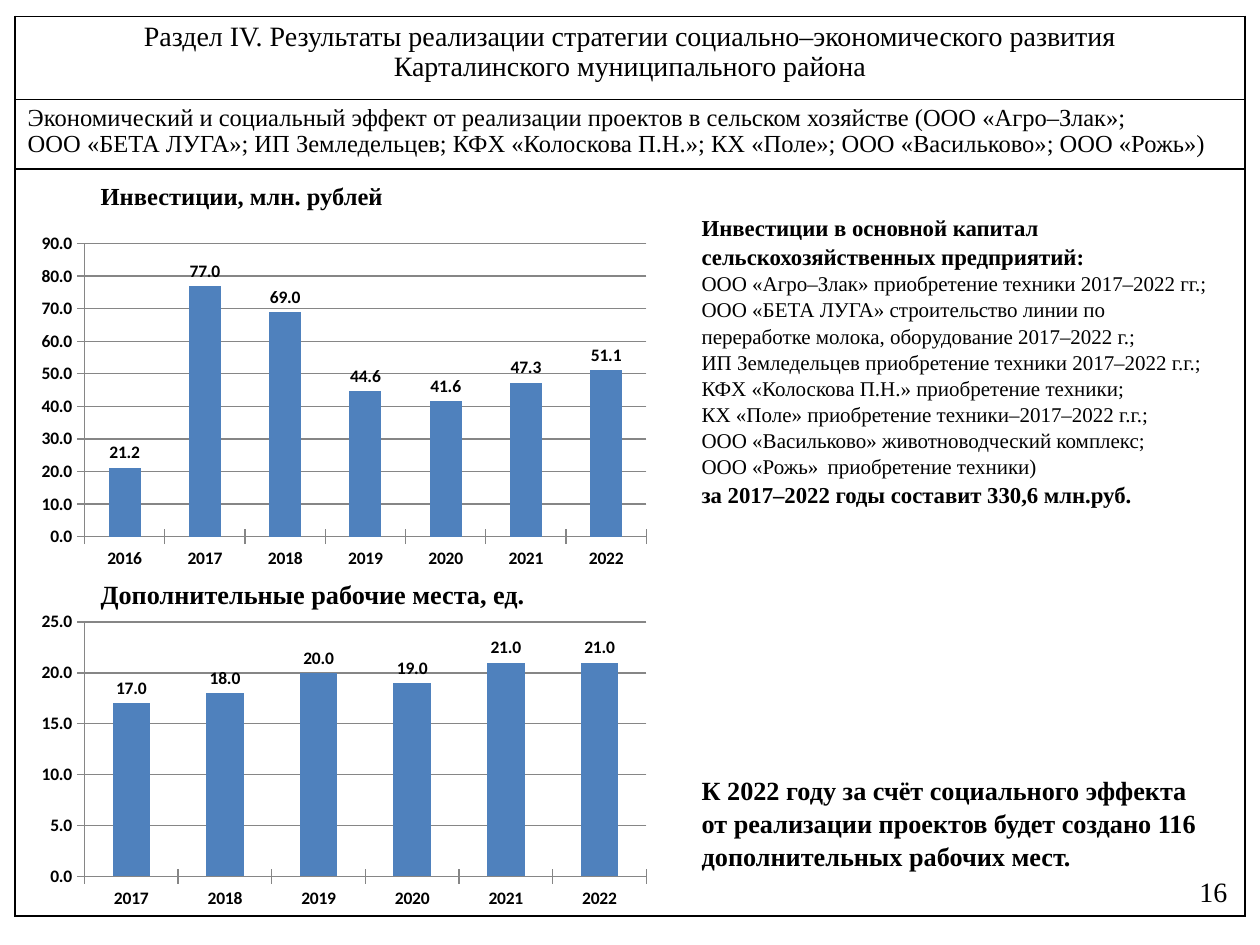
from lxml import etree
from pptx import Presentation
from pptx.chart.data import CategoryChartData
from pptx.dml.color import RGBColor
from pptx.enum.chart import XL_CHART_TYPE, XL_LABEL_POSITION, XL_TICK_MARK
from pptx.enum.text import MSO_ANCHOR, PP_ALIGN
from pptx.oxml.ns import qn
from pptx.util import Inches, Pt

BLACK = RGBColor(0x00, 0x00, 0x00)
BLUE = RGBColor(0x4F, 0x81, 0xBD)
GRAY = RGBColor(0x86, 0x86, 0x86)
COLUMNS = XL_CHART_TYPE.COLUMN_CLUSTERED
OUTSIDE_END = XL_LABEL_POSITION.OUTSIDE_END
CROSS = XL_TICK_MARK.CROSS
LEFT, RIGHT, CENTER, JUSTIFY = PP_ALIGN.LEFT, PP_ALIGN.RIGHT, PP_ALIGN.CENTER, PP_ALIGN.JUSTIFY
TOP, MIDDLE = MSO_ANCHOR.TOP, MSO_ANCHOR.MIDDLE

CHART_LEFT, CHART_WIDTH = 0.23, 5
HEADING_LEFT, NOTE_LEFT, TEXT_WIDTH = 0.7, 5.47, 4.25

TITLE = [
    "Раздел IV. Результаты реализации стратегии социально–экономического развития",
    "Карталинского муниципального района",
]
SUBTITLE = [
    "Экономический и социальный эффект от реализации проектов в сельском хозяйстве (ООО «Агро–Злак»;",
    "ООО «БЕТА ЛУГА»; ИП Земледельцев; КФХ «Колоскова П.Н.»; КХ «Поле»; ООО «Васильково»; ООО «Рожь»)",
]
PROJECTS = [
    "ООО «Агро–Злак» приобретение техники 2017–2022 гг.;",
    "ООО «БЕТА ЛУГА» строительство линии по переработке молока, оборудование 2017–2022 г.;",
    "ИП Земледельцев приобретение техники 2017–2022 г.г.;",
    "КФХ «Колоскова П.Н.» приобретение техники;",
    "КХ «Поле» приобретение техники–2017–2022 г.г.;",
    "ООО «Васильково» животноводческий комплекс;",
    "ООО «Рожь»\tприобретение техники)",
]
INVESTMENTS = {"2016": 21.2, "2017": 77, "2018": 69, "2019": 44.6,
               "2020": 41.6, "2021": 47.3, "2022": 51.1}
JOBS = {"2017": 17, "2018": 18, "2019": 20, "2020": 19, "2021": 21, "2022": 21}


def set_all(target, formats):
    for name, value in formats.items():
        setattr(target, name, value)


class SlideBuilder:
    text_font = "Times New Roman"
    chart_font = "Calibri"

    def __init__(self, slide):
        self.slide = slide

    def fill_text(self, frame, lines, align=LEFT, spacing=1.04):
        """Fill a text frame with (text, size, bold) lines, one paragraph each."""
        for index, (text, size, bold) in enumerate(lines):
            paragraph = frame.add_paragraph() if index else frame.paragraphs[0]
            set_all(paragraph, {"alignment": align, "line_spacing": spacing})
            run = paragraph.add_run()
            run.text = text
            set_all(run.font, {"name": self.text_font, "size": Pt(size), "bold": bold})
            run.font.color.rgb = BLACK

    def text(self, left, top, width, height, lines, align=LEFT, anchor=TOP):
        box = self.slide.shapes.add_textbox(
            Inches(left), Inches(top), Inches(width), Inches(height))
        set_all(box.text_frame, {"word_wrap": True, "vertical_anchor": anchor})
        self.fill_text(box.text_frame, lines, align)

    def border(self, cell):
        properties = cell._tc.get_or_add_tcPr()
        for position, side in enumerate(("a:lnL", "a:lnR", "a:lnT", "a:lnB")):
            line = etree.Element(qn(side), w=str(Pt(1)))
            fill = etree.SubElement(line, qn("a:solidFill"))
            etree.SubElement(fill, qn("a:srgbClr"), val=str(BLACK))
            properties.insert(position, line)

    def frame_table(self, left, top, width, rows):
        """Draw a one-column table from (height, lines, alignment) rows."""
        total = sum(height for height, _, _ in rows)
        table = self.slide.shapes.add_table(
            len(rows), 1, Inches(left), Inches(top), Inches(width), Inches(total)).table
        set_all(table, {"first_row": False, "horz_banding": False})
        for index, (height, lines, align) in enumerate(rows):
            table.rows[index].height = Inches(height)
            cell = table.cell(index, 0)
            cell.fill.background()
            self.border(cell)
            self.fill_text(cell.text_frame, lines, align, 0.96)

    def column_chart(self, top, height, values, maximum, step):
        data = CategoryChartData(number_format="0.0")
        data.categories = list(values)
        data.add_series("Series 1", list(values.values()))
        chart = self.slide.shapes.add_chart(
            COLUMNS, Inches(CHART_LEFT), Inches(top),
            Inches(CHART_WIDTH), Inches(height), data).chart
        set_all(chart, {"has_legend": False, "has_title": False})
        set_all(chart.font, {"name": self.chart_font, "size": Pt(10), "bold": True})
        chart.font.color.rgb = BLACK

        for axis in (chart.category_axis, chart.value_axis):
            axis.major_tick_mark = CROSS
            axis.tick_labels.font.bold = True
            axis.format.line.color.rgb = GRAY
        set_all(chart.value_axis, {"minimum_scale": 0, "maximum_scale": maximum,
                                   "major_unit": step, "has_major_gridlines": True})
        chart.value_axis.major_gridlines.format.line.color.rgb = GRAY
        set_all(chart.value_axis.tick_labels,
                {"number_format": "0.0", "number_format_is_linked": False})

        plot = chart.plots[0]
        set_all(plot, {"gap_width": 150, "vary_by_categories": False,
                       "has_data_labels": True})
        set_all(plot.data_labels, {"show_value": True, "position": OUTSIDE_END,
                                   "number_format": "0.0",
                                   "number_format_is_linked": False})
        plot.data_labels.font.bold = True
        columns = plot.series[0].format.fill
        columns.solid()
        columns.fore_color.rgb = BLUE


def main():
    deck = Presentation()
    set_all(deck, {"slide_width": Inches(10), "slide_height": Inches(7.5)})
    page = SlideBuilder(deck.slides.add_slide(deck.slide_layouts[6]))

    page.frame_table(0.12, 0.13, 9.76, [
        (0.66, [(line, 16, False) for line in TITLE], CENTER),
        (0.55, [(line, 14, False) for line in SUBTITLE], JUSTIFY),
        (5.93, [], LEFT),
    ])

    page.column_chart(1.8, 2.77, INVESTMENTS, 90, 10)
    page.text(HEADING_LEFT, 1.38, TEXT_WIDTH, 0.34,
              [("Инвестиции, млн. рублей", 14, True)])
    page.text(NOTE_LEFT, 1.64, TEXT_WIDTH, 2.37, [
        ("Инвестиции в основной капитал сельскохозяйственных предприятий:", 13, True),
        *((project, 12, False) for project in PROJECTS),
        ("за 2017–2022 годы составит 330,6 млн.руб.", 13, True),
    ])

    page.text(HEADING_LEFT, 4.53, TEXT_WIDTH, 0.35,
              [("Дополнительные рабочие места, ед.", 15, True)])
    page.column_chart(4.81, 2.45, JOBS, 25, 5)
    page.text(NOTE_LEFT, 6.09, TEXT_WIDTH, 0.86, [
        ("К 2022 году за счёт социального эффекта от реализации проектов "
         "будет создано 116 дополнительных рабочих мест.", 15, True)])

    page.text(7.51, 6.87, 2.33, 0.4, [("16", 16, False)], RIGHT, MIDDLE)
    deck.save("out.pptx")


if __name__ == "__main__":
    main()
